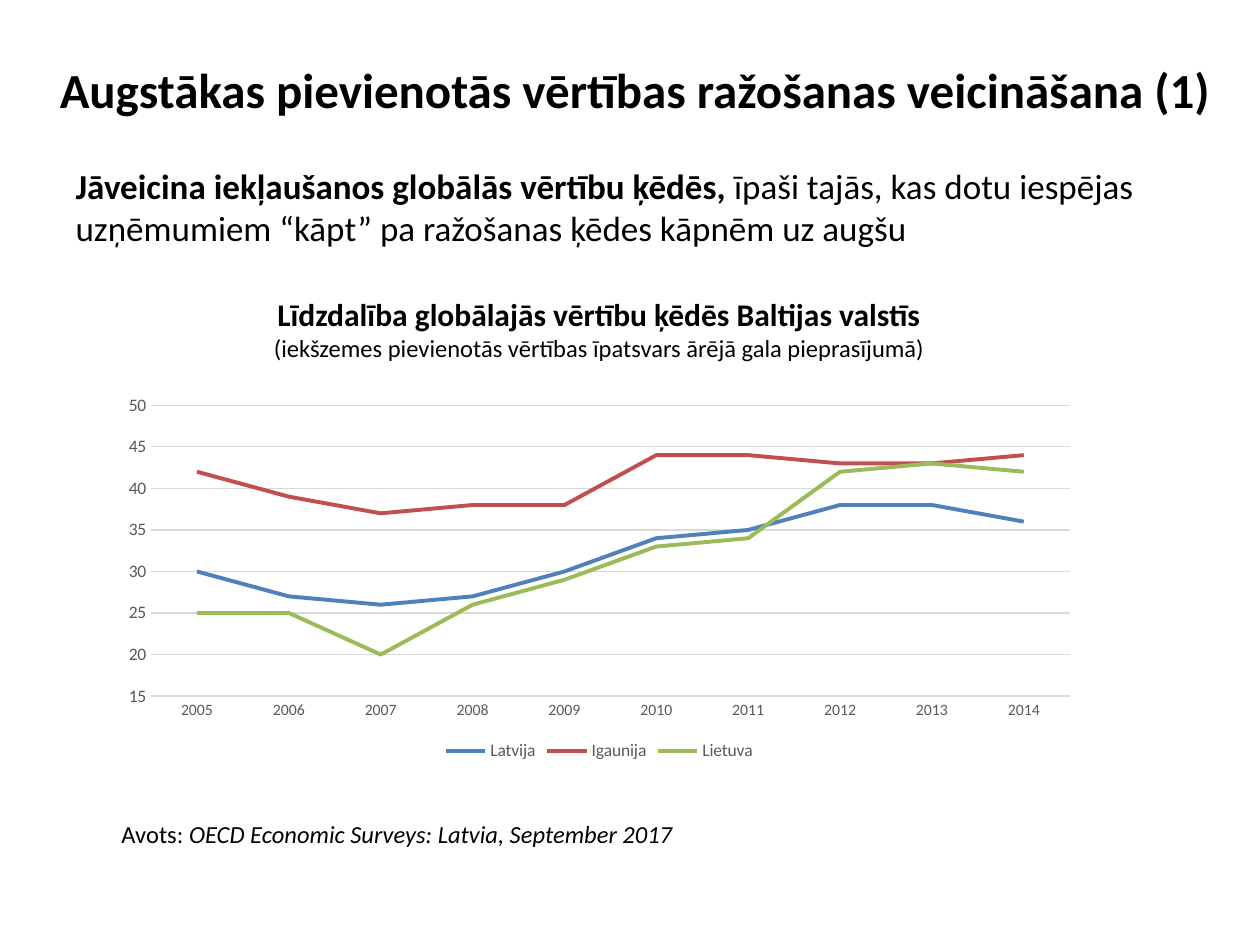
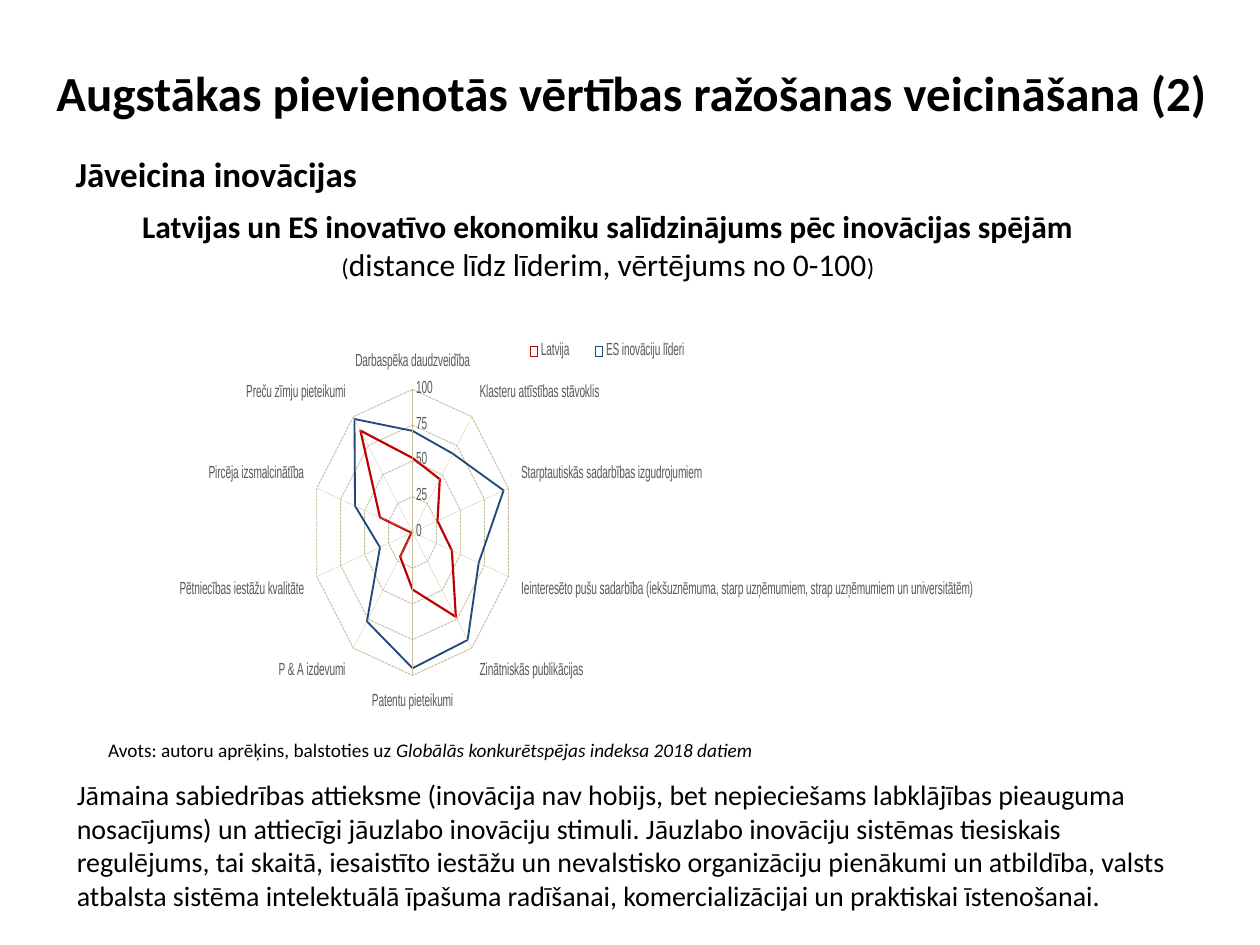
import pptx
import pptx.util
import pptx.chart.data
import pptx.dml.color
import pptx.enum.chart
import pptx.enum.dml
import pptx.enum.text
import pptx.oxml
import pptx.oxml.ns
import lxml.etree

Cm = pptx.util.Cm
Pt = pptx.util.Pt
Kind = pptx.enum.chart.XL_CHART_TYPE
Place = pptx.enum.chart.XL_LEGEND_POSITION
Dash = pptx.enum.dml.MSO_LINE
Fit = pptx.enum.text.MSO_AUTO_SIZE
qn = pptx.oxml.ns.qn

COLORS = {
    "text": "000000",
    "label": "595959",
    "grid": "D9D9D9",
    "sand": "C4BD97",
    "blue": "4F81BD",
    "red": "C0504D",
    "green": "9BBB59",
    "crimson": "C00000",
    "navy": "1F497D",
}


def tint(name):
    return pptx.dml.color.RGBColor.from_string(COLORS[name])


class Deck:
    font = "Calibri"

    def __init__(self):
        self.prs = pptx.Presentation()
        self.prs.slide_width = Cm(25.4)
        self.prs.slide_height = Cm(19.05)
        self.slide = None

    def style(self, font, size, color="text", name=None):
        font.name = name or self.font
        font.size = Pt(size)
        font.color.rgb = tint(color)

    def fill(self, shape, box, lines, center=False):
        shape.left, shape.top, shape.width, shape.height = map(Cm, box)
        frame = shape.text_frame
        frame.word_wrap = True
        frame.auto_size = Fit.NONE
        for num, (size, bold, runs) in enumerate(lines):
            par = frame.add_paragraph() if num else frame.paragraphs[0]
            if center:
                par.alignment = pptx.enum.text.PP_ALIGN.CENTER
            self.style(par.font, size)
            par.font.bold = bold
            for text, looks in runs:
                run = par.add_run()
                run.text = text
                for key, value in looks.items():
                    setattr(run.font, key, value)
        return frame

    def page(self, title, box):
        layout = self.prs.slide_layouts[1]
        self.slide = self.prs.slides.add_slide(layout)
        self.fill(self.slide.shapes.title, box, [(28, True, [(title, {})])], True)

    def body(self, box, runs):
        frame = self.fill(self.slide.placeholders[1], box, [(20, None, runs)])
        props = frame.paragraphs[0]._p.get_or_add_pPr()
        props.set("marL", "0")
        props.set("indent", "0")
        props.insert(0, props.makeelement(qn("a:buNone"), {}))

    def text(self, box, lines, center=False, wrap=True):
        shape = self.slide.shapes.add_textbox(*map(Cm, box))
        frame = self.fill(shape, box, lines, center)
        frame.word_wrap = wrap

    def source(self, box, size, lead, work):
        runs = [(lead, {}), (work, {"italic": True})]
        self.text(box, [(size, False, runs)], wrap=False)

    def rule(self, line, color, width, dash=None):
        line.color.rgb = tint(color)
        line.width = Pt(width)
        if dash:
            line.dash_style = dash

    def chart(self, kind, box, cats, series, name, legend):
        data = pptx.chart.data.CategoryChartData()
        data.categories = cats
        for label, values, *_ in series:
            data.add_series(label, values)
        shape = self.slide.shapes.add_chart(kind, *map(Cm, box), data)
        chart = shape.chart
        chart.has_title = False
        self.style(chart.font, 10, name=name)
        chart.has_legend = True
        chart.legend.position = legend
        chart.legend.include_in_layout = False
        self.style(chart.legend.font, 10, "label", name)
        for axis in (chart.category_axis, chart.value_axis):
            axis.major_tick_mark = axis.minor_tick_mark = pptx.enum.chart.XL_TICK_MARK.NONE
            self.style(axis.tick_labels.font, 10, "label", name)
        self.rule(chart.category_axis.format.line, "grid", 0.75)
        chart.plots[0].vary_by_categories = False
        for item, (_, _, color, width) in zip(chart.plots[0].series, series):
            self.rule(item.format.line, color, width)
        return chart

    def scale(self, axis, low, high, step):
        axis.minimum_scale = low
        axis.maximum_scale = high
        axis.major_unit = step

    def lay(self, node, spot, box, inner=False):
        for old in node.findall(qn("c:layout")):
            node.remove(old)
        layout = node.makeelement(qn("c:layout"), {})
        node.insert(spot, layout)
        manual = lxml.etree.SubElement(layout, qn("c:manualLayout"))
        parts = [("layoutTarget", "inner")] if inner else []
        parts += [("xMode", "edge"), ("yMode", "edge"), *zip("xywh", box)]
        for tag, value in parts:
            lxml.etree.SubElement(manual, qn("c:" + tag)).set("val", str(value))


def chains(deck):
    deck.page("Augstākas pievienotās vērtības ražošanas veicināšana (1)", (0.82, 0.76, 23.95, 2.06))
    deck.body((1.27, 3.18, 22.86, 13.82), [
        ("Jāveicina iekļaušanos globālās vērtību ķēdēs, ", {"bold": True}),
        ("īpaši tajās, kas dotu iespējas uzņēmumiem “kāpt” pa ražošanas ķēdes kāpnēm uz augšu", {"bold": False}),
    ])
    deck.text((2.77, 5.82, 18.62, 1.63), [
        (18, True, [("Līdzdalība globālajās vērtību ķēdēs Baltijas valstīs", {})]),
        (14, False, [("(iekšzemes pievienotās vērtības īpatsvars ārējā gala pieprasījumā)", {})]),
    ], center=True)
    years = [str(year) for year in range(2005, 2015)]
    series = [
        ("Latvija", (30, 27, 26, 27, 30, 34, 35, 38, 38, 36), "blue", 2.25),
        ("Igaunija", (42, 39, 37, 38, 38, 44, 44, 43, 43, 44), "red", 2.25),
        ("Lietuva", (25, 25, 20, 26, 29, 33, 34, 42, 43, 42), "green", 2.25),
    ]
    chart = deck.chart(Kind.LINE, (2.2, 7.82, 19.76, 7.62), years, series, "Calibri", Place.BOTTOM)
    for item in chart.plots[0].series:
        item.smooth = False
    chart.category_axis.tick_labels.font.size = Pt(9)
    axis = chart.value_axis
    deck.scale(axis, 15, 50, 5)
    axis.format.line.fill.background()
    deck.rule(axis.major_gridlines.format.line, "grid", 0.75)
    deck.source((2.2, 16.38, 11.73, 0.85), 14, "Avots: ", "OECD Economic Surveys: Latvia, September 2017")


def skills(deck):
    deck.page("Augstākas pievienotās vērtības ražošanas veicināšana (2)", (0.8, 0.76, 23.85, 2.18))
    deck.body((1.27, 2.95, 22.86, 12.75), [("Jāveicina inovācijas", {"bold": True})])
    small = {"size": Pt(14), "bold": False}
    deck.text((1.93, 4.05, 20.65, 1.8), [(18, True, [
        ("Latvijas un ES inovatīvo ekonomiku salīdzinājums pēc inovācijas spējām ", {}),
        ("(", small),
        ("distance līdz līderim, vērtējums no 0-100", {"bold": False}),
        (")", small),
    ])], center=True)
    cats = [
        "Darbaspēka daudzveidība",
        "Klasteru attīstības stāvoklis",
        "Starptautiskās sadarbības izgudrojumiem",
        "Ieinteresēto pušu sadarbība (iekšuznēmuma, starp uzņēmumiem, strap uzņēmumiem un universitātēm)",
        "Zinātniskās publikācijas",
        "Patentu pieteikumi",
        "P & A izdevumi",
        "Pētniecības iestāžu kvalitāte",
        "Pircēja izsmalcinātība",
        "Preču zīmju pieteikumi",
    ]
    series = [
        ("Latvija", (52, 46, 26, 41, 73, 40, 21, 1, 34, 88), "crimson", 1.75),
        ("ES inovāciju līderi", (71, 68, 95, 69, 93, 95, 77, 34, 60, 98), "navy", 1.5),
    ]
    chart = deck.chart(Kind.RADAR_FILLED, (2.15, 6.24, 17.68, 8.48), cats, series, "Arial Narrow", Place.TOP)
    for item in chart.plots[0].series:
        item.format.fill.background()
    deck.rule(chart.category_axis.major_gridlines.format.line, "grid", 0.75)
    axis = chart.value_axis
    deck.scale(axis, 0, 100, 25)
    axis.tick_labels.number_format = "0"
    axis.tick_labels.number_format_is_linked = False
    deck.rule(axis.format.line, "sand", 0.25, Dash.ROUND_DOT)
    deck.rule(axis.major_gridlines.format.line, "sand", 0, Dash.SQUARE_DOT)
    deck.lay(chart._chartSpace.chart.plotArea, 0, (0.27, 0.19, 0.45, 0.68), True)
    deck.lay(chart.legend._element, 1, (0.65, 0.06, 0.32, 0.08))
    deck.source((1.93, 14.76, 13.72, 0.74), 11, "Avots: autoru aprēķins, balstoties uz ",
                "Globālās konkurētspējas indeksa 2018 datiem")
    deck.text((1.3, 15.55, 22.86, 3), [(16, False, [(
        "Jāmaina sabiedrības attieksme (inovācija nav hobijs, bet nepieciešams labklājības pieauguma "
        "nosacījums) un attiecīgi jāuzlabo inovāciju stimuli. Jāuzlabo inovāciju sistēmas tiesiskais "
        "regulējums, tai skaitā, iesaistīto iestāžu un nevalstisko organizāciju pienākumi un atbildība, "
        "valsts atbalsta sistēma intelektuālā īpašuma radīšanai, komercializācijai un praktiskai "
        "īstenošanai.", {})])])


def main():
    deck = Deck()
    chains(deck)
    skills(deck)
    deck.prs.save("out.pptx")


if __name__ == "__main__":
    main()
